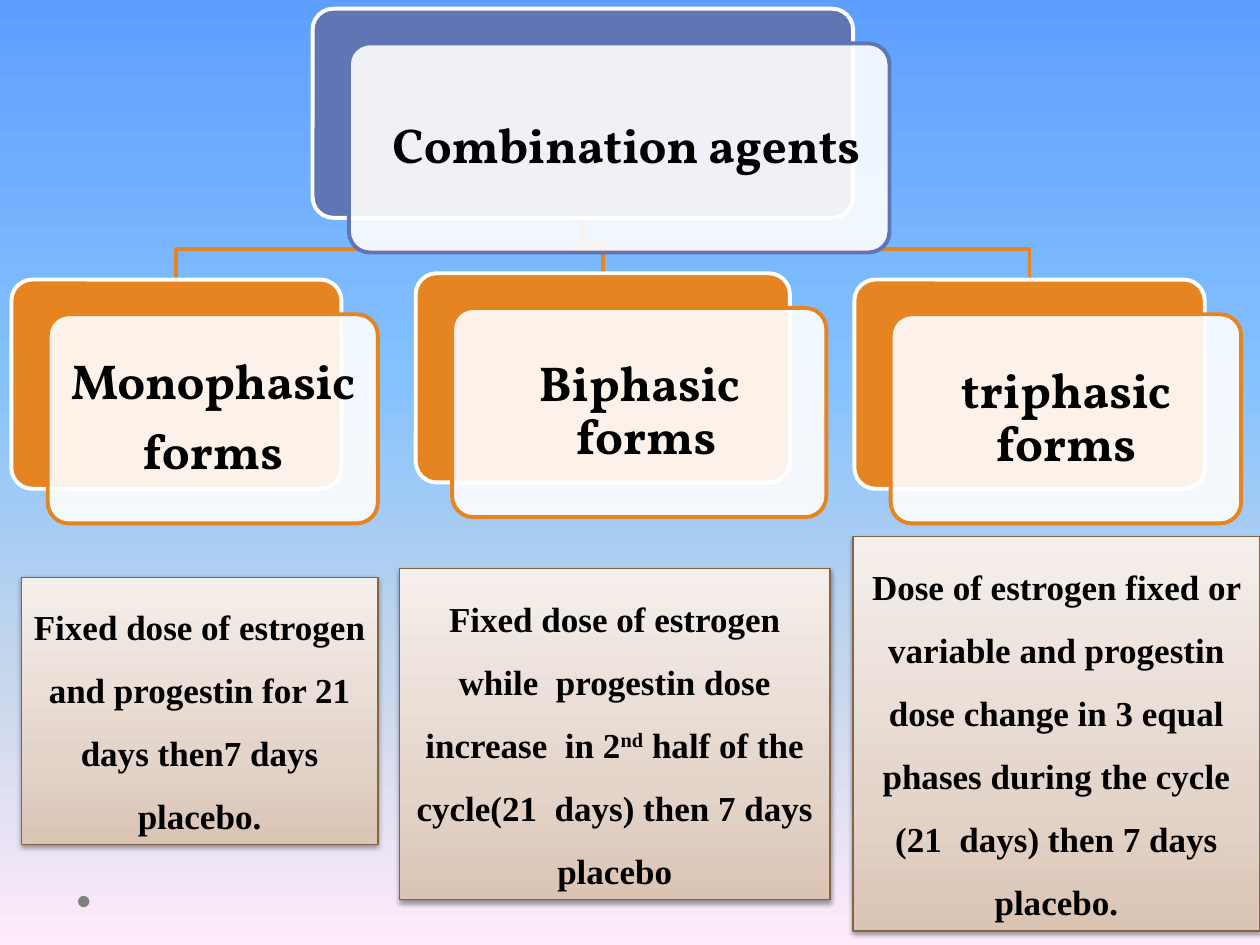
from lxml.etree import SubElement
from pptx import Presentation
from pptx.dml.color import RGBColor
from pptx.enum.shapes import MSO_SHAPE as Shape
from pptx.enum.text import MSO_ANCHOR as Anchor, MSO_AUTO_SIZE as AutoSize, PP_ALIGN as Align
from pptx.oxml.ns import qn
from pptx.util import Pt

BLACK = RGBColor(0x00, 0x00, 0x00)
WHITE = RGBColor(0xFF, 0xFF, 0xFF)
GRAY = RGBColor(0x80, 0x80, 0x80)
BLUE = RGBColor(0x60, 0x76, 0xB4)
ORANGE = RGBColor(0xE6, 0x84, 0x22)
BROWN = RGBColor(0x83, 0x64, 0x45)
SKY = [(0, RGBColor(0x5E, 0x9E, 0xFF)), (40, RGBColor(0x85, 0xC2, 0xFF)),
       (70, RGBColor(0xC4, 0xD6, 0xEB)), (100, RGBColor(0xFF, 0xEB, 0xFA))]
SAND = [(0, RGBColor(0xDA, 0xC4, 0xB4)), (35, RGBColor(0xE4, 0xD5, 0xCB)),
        (100, RGBColor(0xF5, 0xEF, 0xEB))]

CARD_HEIGHT = 119.5
OFFSET_X, OFFSET_Y = 20.8, 19.8
ROOT = (178.6, 5, 308.9)
FORMS = [
    (6.5, 159.8, 188.6, ["Monophasic", "forms"]),
    (237.6, 156.2, 213.8, ["Biphasic forms "]),
    (488.2, 159.8, 200.2, ["triphasic forms"]),
]
NOTES = [
    (12.2, 329.8, 203.8, 152.6,
     [("Fixed dose of estrogen and progestin for 21 days then7 days placebo.", 0)]),
    (228.2, 324.7, 246.2, 189.4,
     [("Fixed dose of estrogen while  progestin dose increase  in 2", 0), ("nd", 30),
      (" half of the cycle(21  days) then 7 days placebo", 0)]),
    (487.4, 306.7, 232.6, 225.4,
     [("Dose of estrogen fixed or variable and progestin dose change in 3 equal "
       "phases during the cycle (21  days) then 7 days placebo.", 0)]),
]


class Diagram:
    heading_font, heading_size = "Vollkorn", 28
    note_font, note_size = "Times New Roman", 20
    line_width = 2.25

    def __init__(self, slide):
        self.slide = slide

    def gradient(self, fill, element, stops, angle):
        fill.gradient()
        fill.gradient_angle = angle
        stop_list = next(element.iter(qn("a:gsLst")))
        for stop in list(stop_list):
            stop_list.remove(stop)
        for position, color in stops:
            stop = SubElement(stop_list, qn("a:gs"), pos=str(position * 1000))
            SubElement(stop, qn("a:srgbClr"), val=str(color))

    def background(self, stops):
        background = self.slide.background
        self.gradient(background.fill, self.slide.element, stops, 270)

    def shape(self, kind, left, top, width, height, fill=None, line=None, line_width=line_width):
        shape = self.slide.shapes.add_shape(kind, Pt(left), Pt(top), Pt(width), Pt(height))
        shape.shadow.inherit = False
        if fill is not None:
            shape.fill.solid()
            shape.fill.fore_color.rgb = fill
        if line is None:
            shape.line.fill.background()
        else:
            shape.line.color.rgb = line
            shape.line.width = Pt(line_width)
        return shape

    def style(self, paragraph, name, size, spacing):
        paragraph.alignment = Align.CENTER
        paragraph.line_spacing = spacing
        font = paragraph.font
        font.name, font.size, font.bold = name, Pt(size), True
        font.color.rgb = BLACK

    def elbow(self, start, end):
        bend = end[1] - 17.5
        points = [(start[0], bend), (end[0], bend), end]
        builder = self.slide.shapes.build_freeform(Pt(start[0]), Pt(start[1]))
        builder.add_line_segments([(Pt(x), Pt(y)) for x, y in points], close=False)
        shape = builder.convert_to_shape()
        shape.shadow.inherit = False
        shape.fill.background()
        shape.line.color.rgb = ORANGE
        shape.line.width = Pt(self.line_width)

    def card(self, left, top, width, color, lines):
        back = self.shape(Shape.ROUNDED_RECTANGLE, left, top, width, CARD_HEIGHT, color, WHITE)
        front = self.shape(Shape.ROUNDED_RECTANGLE, left + OFFSET_X, top + OFFSET_Y,
                           width, CARD_HEIGHT, WHITE, color)
        back.adjustments[0] = front.adjustments[0] = 0.1
        white = front.element.spPr.find(qn("a:solidFill"))[0]
        SubElement(white, qn("a:alpha"), val="90000")
        frame = front.text_frame
        frame.word_wrap = True
        frame.vertical_anchor = Anchor.MIDDLE
        frame.margin_left = frame.margin_right = Pt(8.4)
        frame.margin_top = frame.margin_bottom = Pt(8.4)
        frame.text = "\n".join(lines)
        for paragraph in frame.paragraphs:
            self.style(paragraph, self.heading_font, self.heading_size, 0.9)
            paragraph.space_after = Pt(9.8)
            paragraph._p.get_or_add_pPr().set("rtl", "1")

    def note(self, left, top, width, height, runs):
        shape = self.shape(Shape.RECTANGLE, left, top, width, height, None, BROWN, 0.75)
        self.gradient(shape.fill, shape.element, SAND, 90)
        effects = shape.element.spPr.find(qn("a:effectLst"))
        shadow = SubElement(effects, qn("a:outerShdw"), blurRad=str(Pt(3.1)),
                            dist=str(Pt(1.6)), dir="5400000", rotWithShape="0")
        color = SubElement(shadow, qn("a:srgbClr"), val=str(BLACK))
        SubElement(color, qn("a:alpha"), val="38000")
        frame = shape.text_frame
        frame.word_wrap = True
        frame.auto_size = AutoSize.SHAPE_TO_FIT_TEXT
        paragraph = frame.paragraphs[0]
        self.style(paragraph, self.note_font, self.note_size, 1.5)
        for text, raised in runs:
            run = paragraph.add_run()
            run.text = text
            if raised:
                run._r.get_or_add_rPr().set("baseline", str(raised * 1000))

    def dot(self, left, top, size):
        self.shape(Shape.OVAL, left, top, size, size, GRAY)


def main():
    presentation = Presentation()
    presentation.slide_width, presentation.slide_height = Pt(720), Pt(540)
    diagram = Diagram(presentation.slides.add_slide(presentation.slide_layouts[6]))
    diagram.background(SKY)
    diagram.dot(44.6, 511.9, 6.5)

    root_left, root_top, root_width = ROOT
    root_foot = (root_left + root_width / 2, root_top + CARD_HEIGHT)
    for left, top, width, _ in reversed(FORMS):
        diagram.elbow(root_foot, (left + width / 2, top))
    diagram.card(*ROOT, BLUE, ["Combination agents "])
    for left, top, width, lines in FORMS:
        diagram.card(left, top, width, ORANGE, lines)
    for note in NOTES:
        diagram.note(*note)
    presentation.save("out.pptx")


if __name__ == "__main__":
    main()
